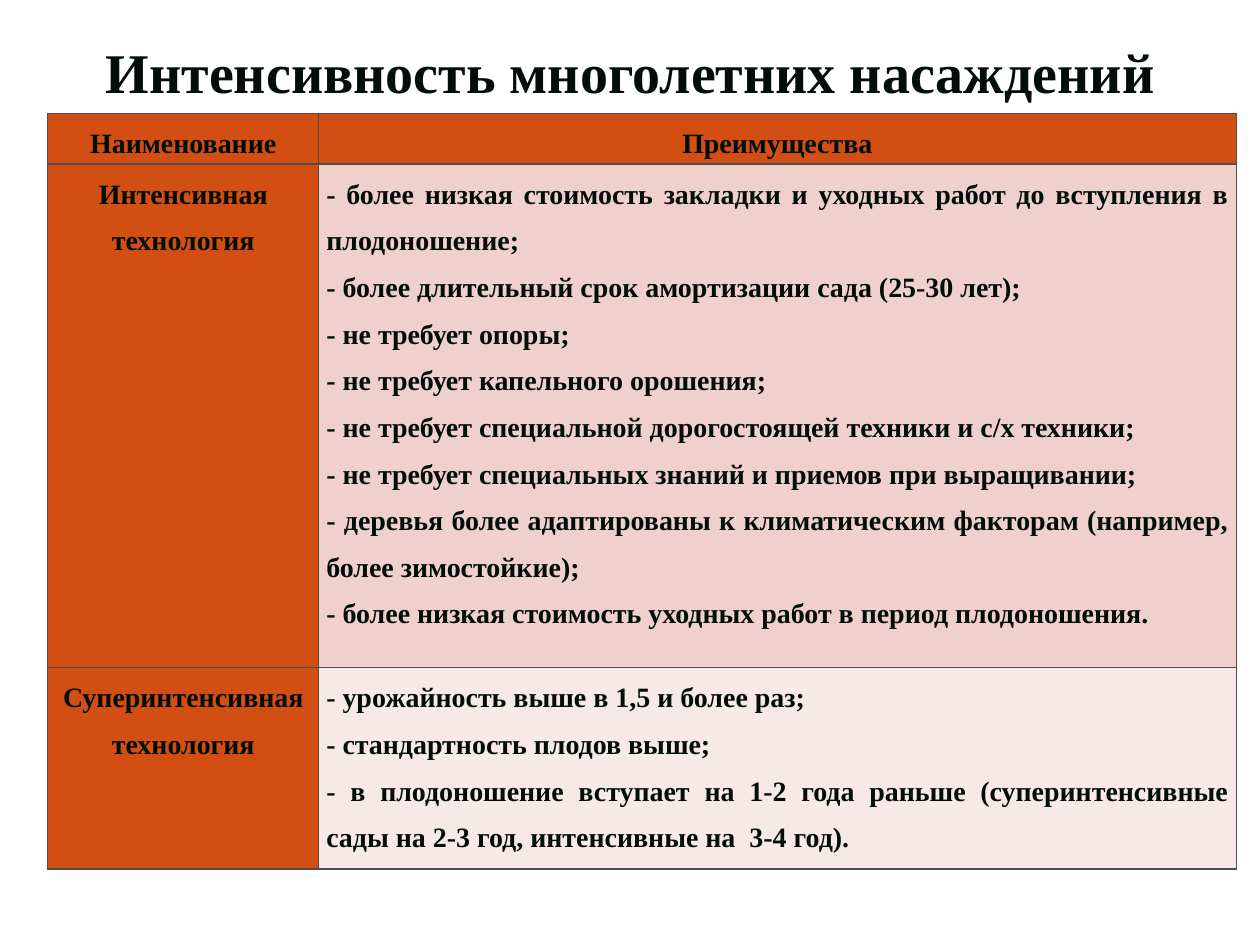
"""Build a slide comparing intensive and super-intensive orchard methods."""
from dataclasses import dataclass

from lxml import etree
from pptx import Presentation
from pptx import util as u
from pptx.dml.color import RGBColor
from pptx.enum import text as t
from pptx.oxml.ns import qn


@dataclass(frozen=True)
class Theme:
    font: str = "Times New Roman"
    ink: str = "040E08"
    head: str = "D34E13"
    rule: str = "4D4D4D"
    title: float = 32
    body: float = 16
    thick: float = 1
    thin: float = 0.5


@dataclass(frozen=True)
class Row:
    name: str
    gains: tuple[str, ...]
    fill: str
    high: float
    align: t.PP_ALIGN = t.PP_ALIGN.JUSTIFY


THEME = Theme()
WIDTHS = (2.15, 7.28)
ROWS = (
    Row("Наименование", ("Преимущества",), THEME.head, 0.4, t.PP_ALIGN.CENTER),
    Row("Интенсивная технология", (
        "- более низкая стоимость закладки и уходных работ до вступления в плодоношение;",
        "- более длительный срок амортизации сада (25-30 лет);",
        "- не требует опоры;",
        "- не требует капельного орошения;",
        "- не требует специальной дорогостоящей техники и с/х техники;",
        "- не требует специальных знаний и приемов при выращивании;",
        "- деревья более адаптированы к климатическим факторам (например, более зимостойкие);",
        "- более низкая стоимость уходных работ в период плодоношения.",
    ), "EFD0CC", 3.99),
    Row("Суперинтенсивная технология", (
        "- урожайность выше в 1,5 и более раз;",
        "- стандартность плодов выше;",
        "- в плодоношение вступает на 1-2 года раньше (суперинтенсивные сады на 2-3 год, интенсивные на  3-4 год).",
    ), "F7E9E7", 1.6),
)


def write(frame, *lines: str, size: float = THEME.body,
          align=t.PP_ALIGN.CENTER, space: float = 1.0) -> None:
    """Write each line as one bold paragraph."""
    for num, line in enumerate(lines):
        para = frame.add_paragraph() if num else frame.paragraphs[0]
        para.alignment = align
        para.line_spacing = space
        run = para.add_run()
        run.text = line
        run.font.name = THEME.font
        run.font.size = u.Pt(size)
        run.font.bold = True
        run.font.color.rgb = RGBColor.from_string(THEME.ink)


def edge(cell, top: float, base: float) -> None:
    """Rule the four sides of a cell."""
    props = cell._tc.get_or_add_tcPr()
    sides = {"lnL": THEME.thin, "lnR": THEME.thin, "lnT": top, "lnB": base}
    for num, (side, wide) in enumerate(sides.items()):
        line = etree.Element(qn(f"a:{side}"), w=str(u.Pt(wide)))
        fill = etree.SubElement(line, qn("a:solidFill"))
        etree.SubElement(fill, qn("a:srgbClr"), val=THEME.rule)
        props.insert(num, line)


def paint(cell, lines: tuple[str, ...], fill: str, align) -> None:
    """Fill a cell with colour and text."""
    cell.margin_left = cell.margin_right = u.Inches(0.06)
    cell.margin_top = cell.margin_bottom = 0
    cell.fill.solid()
    cell.fill.fore_color.rgb = RGBColor.from_string(fill)
    write(cell.text_frame, *lines, align=align, space=1.5)


def grid(slide) -> None:
    """Draw the table of methods."""
    table = slide.shapes.add_table(
        len(ROWS), len(WIDTHS), u.Inches(0.38), u.Inches(0.9),
        u.Inches(sum(WIDTHS)), u.Inches(sum(row.high for row in ROWS))).table
    for col, wide in zip(table.columns, WIDTHS):
        col.width = u.Inches(wide)
    last = len(ROWS) - 1
    for num, row in enumerate(ROWS):
        table.rows[num].height = u.Inches(row.high)
        name, gains = table.cell(num, 0), table.cell(num, 1)
        paint(name, (row.name,), THEME.head, t.PP_ALIGN.CENTER)
        paint(gains, row.gains, row.fill, row.align)
        top = THEME.thick if num < 2 else THEME.thin
        base = THEME.thick if num in (0, last) else THEME.thin
        for cell in (name, gains):
            edge(cell, top, base)


def main() -> None:
    """Make and save the deck."""
    deck = Presentation()
    deck.slide_width, deck.slide_height = u.Inches(10), u.Inches(7.5)
    slide = deck.slides.add_slide(deck.slide_layouts[6])
    title = slide.shapes.add_textbox(
        u.Inches(0.38), u.Inches(0.25), u.Inches(9.25), u.Inches(0.64))
    title.text_frame.word_wrap = True
    title.text_frame.auto_size = t.MSO_AUTO_SIZE.SHAPE_TO_FIT_TEXT
    write(title.text_frame, "Интенсивность многолетних насаждений", size=THEME.title)
    grid(slide)
    deck.save("out.pptx")


if __name__ == "__main__":
    main()
